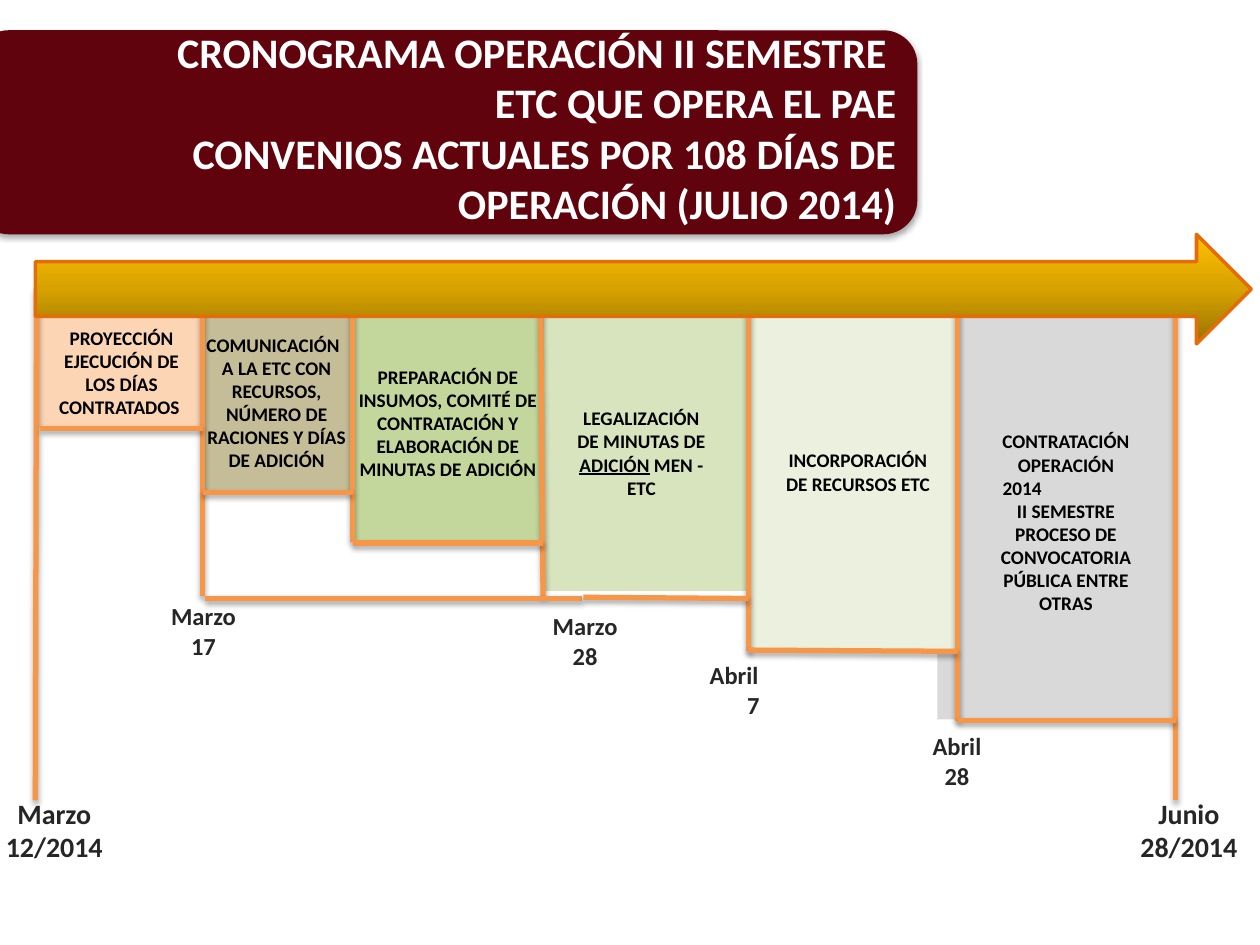
from copy import deepcopy
from dataclasses import dataclass

from pptx import Presentation
from pptx.dml.color import RGBColor
from pptx.enum.shapes import MSO_CONNECTOR, MSO_SHAPE
from pptx.enum.text import MSO_ANCHOR, PP_ALIGN
from pptx.oxml import parse_xml
from pptx.oxml.ns import qn
from pptx.util import Pt

STRAIGHT = MSO_CONNECTOR.STRAIGHT
RECTANGLE, ROUNDED = MSO_SHAPE.RECTANGLE, MSO_SHAPE.ROUNDED_RECTANGLE
RIGHT_ARROW = MSO_SHAPE.RIGHT_ARROW
MIDDLE, BOTTOM = MSO_ANCHOR.MIDDLE, MSO_ANCHOR.BOTTOM
CENTER, RIGHT = PP_ALIGN.CENTER, PP_ALIGN.RIGHT


@dataclass(frozen=True)
class Theme:
    font: str = "Calibri"
    title_size: int = 24
    end_size: int = 16
    date_size: int = 14
    stage_size: int = 11
    white: str = "FFFFFF"
    black: str = "000000"
    date: str = "262626"
    banner: str = "61030C"
    rule: str = "F79646"
    arrow_edge: str = "E46C0A"
    arrow_stops: tuple = ("977200", "D7A200", "FFC000")


THEME = Theme()
SHADOW = (
    '<a:effectLst xmlns:a="http://schemas.openxmlformats.org/drawingml/2006/main">'
    '<a:outerShdw blurRad="39400" dist="22900" dir="5400000" rotWithShape="0">'
    '<a:srgbClr val="000000"><a:alpha val="35000"/></a:srgbClr>'
    "</a:outerShdw></a:effectLst>"
)

prs = Presentation()
prs.slide_width, prs.slide_height = Pt(720), Pt(540)
slide = prs.slides.add_slide(prs.slide_layouts[6])
shapes = slide.shapes


def add_text(frame, paragraphs, size, color, align=CENTER, anchor=MIDDLE,
             underlined=None, right_margins=()):
    """Add a text box; each paragraph is a list of runs, margins go by paragraph index."""
    text_frame = shapes.add_textbox(*map(Pt, frame)).text_frame
    text_frame.word_wrap = True
    text_frame.vertical_anchor = anchor
    margins = dict(right_margins)
    for index, pieces in enumerate(paragraphs):
        paragraph = text_frame.add_paragraph() if index else text_frame.paragraphs[0]
        paragraph.alignment = align
        # An explicit zero keeps a margin from carrying over to the next paragraph
        properties = paragraph._p.get_or_add_pPr()
        properties.set("marL", "0")
        properties.set("marR", str(Pt(margins.get(index, 0))))
        properties.set("indent", "0")
        for piece in pieces:
            run = paragraph.add_run()
            run.text = piece
            run.font.name = THEME.font
            run.font.size = Pt(size)
            run.font.bold = True
            run.font.color.rgb = RGBColor.from_string(color)
            if piece == underlined:
                run.font.underline = True


def add_rule(x1, y1, x2, y2):
    rule = shapes.add_connector(STRAIGHT, Pt(x1), Pt(y1), Pt(x2), Pt(y2))
    rule.line.color.rgb = RGBColor.from_string(THEME.rule)
    rule.line.width = Pt(3)
    rule._element.spPr.append(parse_xml(SHADOW))


# Stage blocks hanging from the arrow, last stage at the back: left, width, height, fill
STAGE_TOP = 179.3
stage_blocks = [
    (535.7, 136.1, 231.8, "D9D9D9"),
    (427.7, 118.8, 192.2, "EBF1DE"),
    (310.3, 117.4, 158.4, "D7E4BD"),
    (201.6, 109.4, 130.3, "C3D69B"),
    (115.9, 85, 102.2, "C4BD97"),
    (20.9, 95, 65.5, "FCD5B5"),
]
for left, width, height, color in stage_blocks:
    block = shapes.add_shape(RECTANGLE, Pt(left), Pt(STAGE_TOP), Pt(width), Pt(height))
    block.shadow.inherit = False
    block.fill.solid()
    block.fill.fore_color.rgb = RGBColor.from_string(color)
    block.line.fill.background()

# Title banner
banner = shapes.add_shape(ROUNDED, Pt(-14.4), Pt(17.3), Pt(538.6), Pt(116.6))
banner.fill.solid()
banner.fill.fore_color.rgb = RGBColor.from_string(THEME.banner)
banner.line.fill.background()
banner._element.spPr.append(parse_xml(SHADOW))
add_text((20.2, 37.4, 499, 96.5),
         [["CRONOGRAMA OPERACIÓN II SEMESTRE "],
          ["ETC QUE OPERA EL PAE"],
          ["CONVENIOS ACTUALES POR 108 DÍAS DE OPERACIÓN (JULIO 2014)"]],
         THEME.title_size, THEME.white, RIGHT, BOTTOM)

# Vertical rules: top x, bottom x, bottom y
RULE_TOP = 165
for top_x, bottom_x, bottom in [
    (20.9, 20.2, 457.2), (115.9, 115.9, 340.6), (201.6, 201.6, 309.6),
    (308.9, 310.3, 340.6), (427.7, 427.7, 372.2), (547.2, 547.2, 411.8),
    (671.8, 671.8, 457.2),
]:
    add_rule(top_x, RULE_TOP, bottom_x, bottom)

# Horizontal rules under the stages
for x1, y1, x2, y2 in [
    (23, 244.8, 115.9, 244.8), (115.9, 281.5, 201.6, 281.5),
    (201.6, 310.3, 310.3, 310.3), (117.4, 342, 332.6, 342),
    (333.4, 341.3, 427.7, 342), (427.7, 371.5, 547.2, 372.2),
    (547.2, 411.8, 671.8, 411.8),
]:
    add_rule(x1, y1, x2, y2)

# Dates: left, top, width, paragraphs, size, right margins
for left, top, width, date, size, margins in [
    (82.8, 349.2, 67, ["Marzo 17"], THEME.date_size, {}),
    (303.1, 355, 62.6, ["Marzo 28"], THEME.date_size, {}),
    (393.8, 383, 73.4, ["Abril", "7"], THEME.date_size, {0: 22}),
    (518.4, 423.4, 56.9, ["Abril 28"], THEME.date_size, {}),
    (643.7, 463, 71.3, ["Junio 28/2014"], THEME.end_size, {}),
    (-8.6, 463, 79.2, ["Marzo 12/2014"], THEME.end_size, {}),
]:
    add_text((left, top, width, 22.3), [[line] for line in date], size, THEME.date,
             right_margins=margins)

# Stage descriptions: left, top, width, paragraphs, right margins
for left, top, width, description, margins in [
    (25.2, 195.8, 88.6, [["PROYECCIÓN EJECUCIÓN DE LOS DÍAS CONTRATADOS "]], {}),
    (106.6, 213.1, 103,
     [["COMUNICACIÓN"], ["A LA ETC CON RECURSOS, NÚMERO DE RACIONES Y DÍAS DE ADICIÓN"]],
     {0: 4}),
    (190.8, 224.6, 130.3,
     [["PREPARACIÓN DE INSUMOS, COMITÉ DE CONTRATACIÓN Y ELABORACIÓN DE MINUTAS DE ADICIÓN"]],
     {}),
    (320.4, 241.9, 92.2, [["LEGALIZACIÓN DE MINUTAS DE ", "ADICIÓN", " MEN - ETC"]], {}),
    (439.2, 252.7, 102.2, [["INCORPORACIÓN DE RECURSOS ETC"]], {}),
    (563.8, 281.5, 90.7,
     [["CONTRATACIÓN OPERACIÓN"], ["2014"], ["II SEMESTRE"],
      ["PROCESO DE CONVOCATORIA PÚBLICA ENTRE OTRAS"]],
     {1: 50}),
]:
    add_text((left, top, width, 33.8), description, THEME.stage_size, THEME.black,
             underlined="ADICIÓN", right_margins=margins)

# Timeline arrow
timeline = shapes.add_shape(RIGHT_ARROW, Pt(20.2), Pt(133.9), Pt(694.8), Pt(62.6))
timeline.shadow.inherit = False
timeline.line.color.rgb = RGBColor.from_string(THEME.arrow_edge)
timeline.line.width = Pt(2)
timeline.fill.gradient()
timeline.fill.gradient_angle = 90
stop_list = timeline._element.spPr.find(qn("a:gradFill")).find(qn("a:gsLst"))
stop_list.append(deepcopy(stop_list[0]))
for index, stop in enumerate(timeline.fill.gradient_stops):
    stop.position = index / 2
    stop.color.rgb = RGBColor.from_string(THEME.arrow_stops[index])

prs.save("out.pptx")
